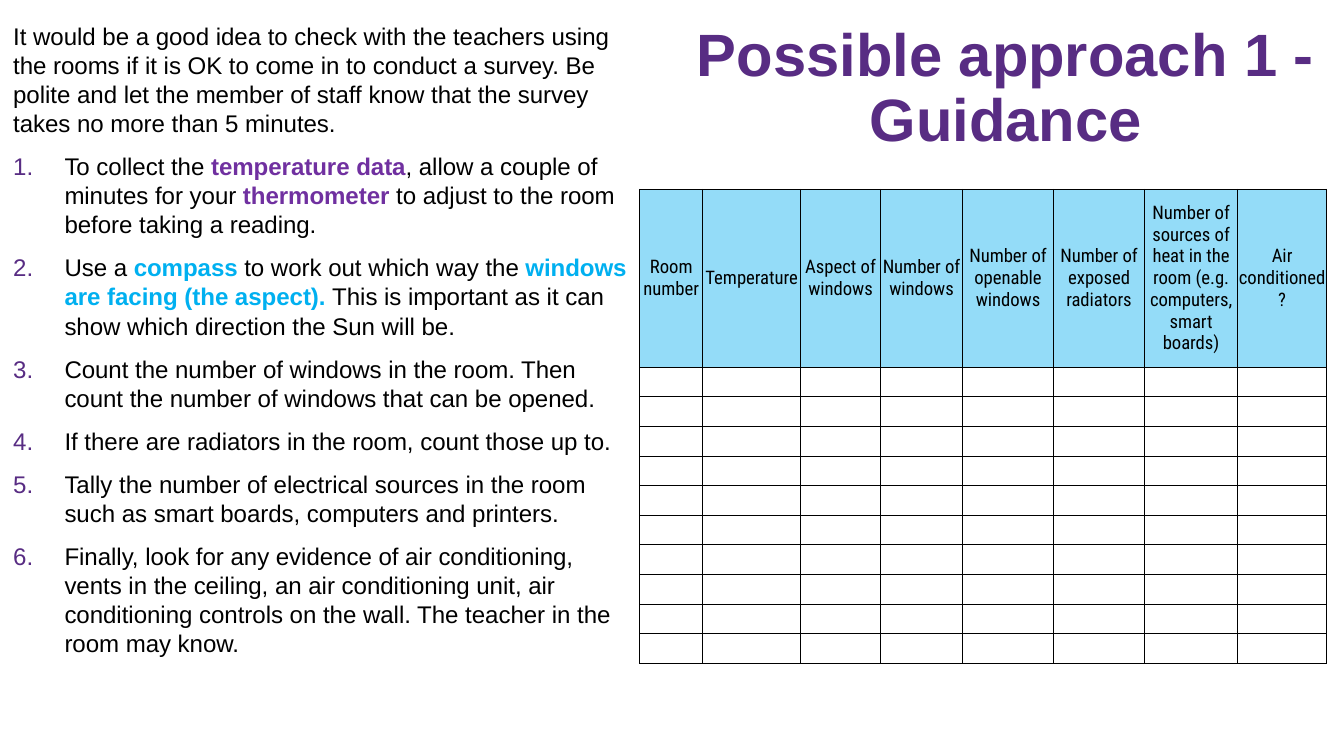
import lxml.etree
import pptx
import pptx.dml.color
import pptx.enum.text
import pptx.oxml.ns
import pptx.util

Cm, Pt = pptx.util.Cm, pptx.util.Pt
ALIGN, ANCHOR = pptx.enum.text.PP_ALIGN, pptx.enum.text.MSO_ANCHOR
qn = pptx.oxml.ns.qn

BLACK, PURPLE, VIOLET, SKY, PALE_BLUE = "000000", "582C83", "7030A0", "00B0F0", "94DCF8"

INTRO = ("It would be a good idea to check with the teachers using the rooms if it is OK "
         "to come in to conduct a survey. Be polite and let the member of staff know that "
         "the survey takes no more than 5 minutes.")
# Each step is a list of (words, highlight colour or None).
STEPS = [
    [("To collect the ", None), ("temperature data", VIOLET),
     (", allow a couple of minutes for your ", None), ("thermometer", VIOLET),
     (" to adjust to the room before taking a reading.", None)],
    [("Use a ", None), ("compass", SKY), (" to work out which way the ", None),
     ("windows are facing (the aspect). ", SKY),
     ("This is important as it can show which direction the Sun will be.", None)],
    [("Count the number of windows in the room. Then count the number of windows "
      "that can be opened.", None)],
    [("If there are radiators in the room, count those up to.", None)],
    [("Tally the number of electrical sources in the room such as smart boards, "
      "computers and printers.", None)],
    [("Finally, look for any evidence of air conditioning, vents in the ceiling, an air "
      "conditioning unit, air conditioning controls on the wall. The teacher in the room "
      "may know.", None)],
]
# Heading and width in cm of each survey column.
COLUMNS = [
    ("Room number", 1.19), ("Temperature", 1.85), ("Aspect of windows", 1.51),
    ("Number of windows", 1.55), ("Number of openable windows", 1.72),
    ("Number of exposed radiators", 1.72),
    ("Number of sources of heat in the room (e.g. computers, smart boards)", 1.76),
    ("Air conditioned?", 1.68),
]
ROOM_ROWS = 10
HEADING_HEIGHT, ROOM_HEIGHT = 3.36, 0.56


def rgb(colour):
    return pptx.dml.color.RGBColor.from_string(colour)


def apply(target, formats):
    for name, value in formats.items():
        setattr(target, name, value)


def add_words(paragraph, words, colour, **formats):
    run = paragraph.add_run()
    run.text = words
    apply(run.font, formats)
    run.font.color.rgb = rgb(colour)


def place_title(slide, left, top, width, height):
    title = slide.shapes.title
    apply(title, dict(left=Cm(left), top=Cm(top), width=Cm(width), height=Cm(height)))
    apply(title.text_frame, dict(word_wrap=True, vertical_anchor=ANCHOR.MIDDLE,
                                 auto_size=pptx.enum.text.MSO_AUTO_SIZE.NONE))
    heading = title.text_frame.paragraphs[0]
    apply(heading, dict(alignment=ALIGN.CENTER, line_spacing=Pt(34.8)))
    add_words(heading, "Possible approach 1 - Guidance", PURPLE,
              name="Arial", size=Pt(32), bold=True)


def number_paragraph(paragraph):
    properties = paragraph._p.get_or_add_pPr()
    indent = Cm(0.97)
    properties.set("marL", str(indent))
    properties.set("indent", str(-indent))
    colour = lxml.etree.SubElement(properties, qn("a:buClr"))
    lxml.etree.SubElement(colour, qn("a:srgbClr"), val=PURPLE)
    lxml.etree.SubElement(properties, qn("a:buFont"), typeface="+mj-lt")
    lxml.etree.SubElement(properties, qn("a:buAutoNum"), type="arabicPeriod")


def add_instructions(slide, left, top, width, height):
    frame = slide.shapes.add_textbox(Cm(left), Cm(top), Cm(width), Cm(height)).text_frame
    frame.word_wrap = True
    body = dict(name="Arial", size=Pt(12.9))
    intro = frame.paragraphs[0]
    intro.line_spacing = Pt(15.55)
    add_words(intro, INTRO, BLACK, **body)
    for step in STEPS:
        paragraph = frame.add_paragraph()
        number_paragraph(paragraph)
        apply(paragraph, dict(line_spacing=Pt(15.55), space_before=Pt(7.5)))
        for words, highlight in step:
            add_words(paragraph, words, highlight or BLACK, bold=bool(highlight), **body)


def add_borders(cell):
    properties = cell._tc.get_or_add_tcPr()
    for side in ("lnL", "lnR", "lnT", "lnB"):
        line = lxml.etree.SubElement(properties, qn(f"a:{side}"), w=str(Pt(0.5)))
        fill = lxml.etree.SubElement(line, qn("a:solidFill"))
        lxml.etree.SubElement(fill, qn("a:srgbClr"), val=BLACK)


def add_survey_table(slide, left, top):
    width = sum(column_width for _, column_width in COLUMNS)
    height = HEADING_HEIGHT + ROOM_ROWS * ROOM_HEIGHT
    survey = slide.shapes.add_table(ROOM_ROWS + 1, len(COLUMNS), Cm(left), Cm(top),
                                    Cm(width), Cm(height)).table
    apply(survey, dict(first_row=False, horz_banding=False))
    for column, (_, column_width) in zip(survey.columns, COLUMNS):
        column.width = Cm(column_width)
    for index, row in enumerate(survey.rows):
        row.height = Cm(ROOM_HEIGHT if index else HEADING_HEIGHT)
        for cell, (heading, _) in zip(row.cells, COLUMNS):
            apply(cell, dict(margin_left=0, margin_right=0, margin_top=0, margin_bottom=0,
                             vertical_anchor=ANCHOR.MIDDLE))
            add_borders(cell)
            paragraph = cell.text_frame.paragraphs[0]
            paragraph.alignment = ALIGN.CENTER
            if index == 0:
                cell.fill.solid()
                cell.fill.fore_color.rgb = rgb(PALE_BLUE)
                add_words(paragraph, heading, BLACK, name="Roboto Condensed", size=Pt(10))
            else:
                cell.fill.background()
                # An empty cell takes its line height from the end mark.
                lxml.etree.SubElement(paragraph._p, qn("a:endParaRPr"), sz="1000")


def main():
    presentation = pptx.Presentation()
    apply(presentation, dict(slide_width=Cm(25.4), slide_height=Cm(14.29)))
    slide = presentation.slides.add_slide(presentation.slide_layouts[5])
    place_title(slide, 12.85, 0.28, 12.32, 2.77)
    add_instructions(slide, 0, 0.28, 12.12, 13)
    add_survey_table(slide, 12.09, 3.58)
    presentation.save("out.pptx")


if __name__ == "__main__":
    main()
